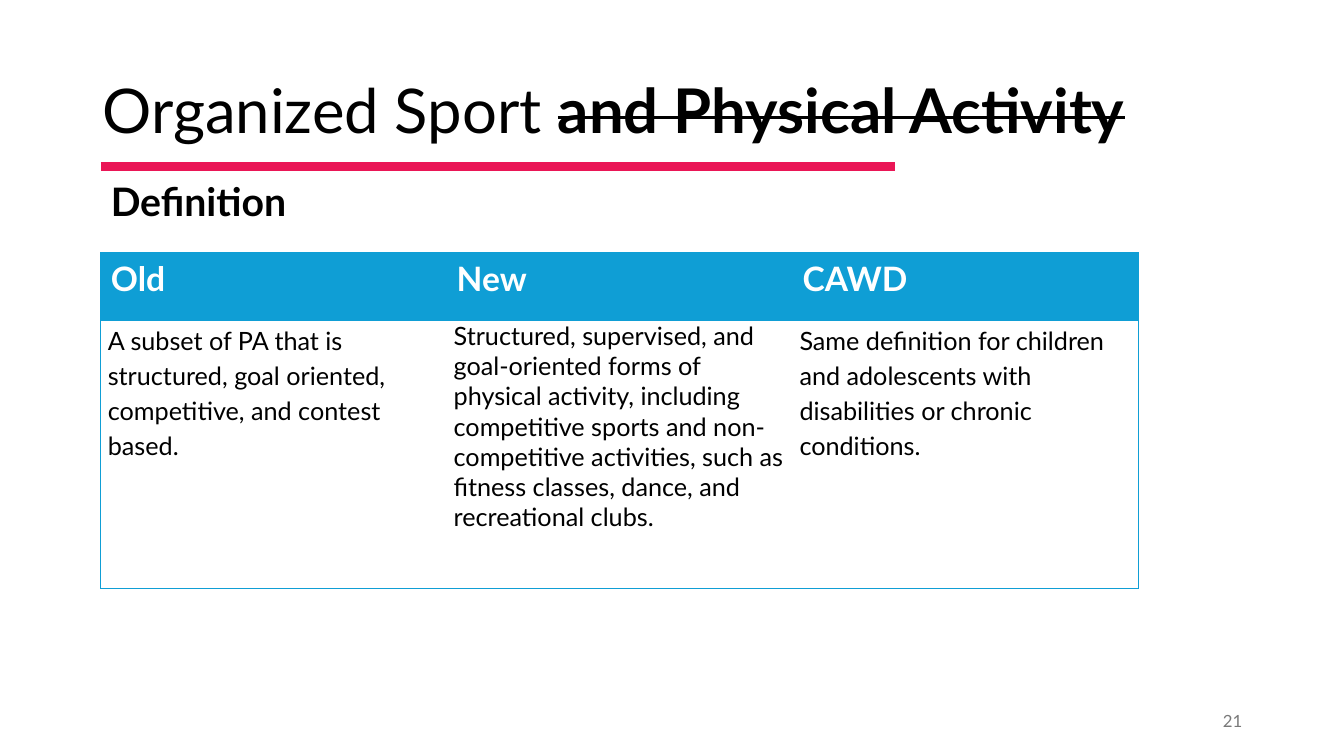
from lxml import etree
from pptx import Presentation
from pptx.dml.color import RGBColor
from pptx.enum import shapes, text
from pptx.oxml import ns
from pptx.util import Inches, Pt

FONT = "Lato"
BLACK, WHITE, GRAY = "000000", "FFFFFF", "797979"
BLUE, PINK = "0F9ED5", "EA1656"
HEADINGS = ["Old", "New", "CAWD"]
DEFINITIONS = [
    ("A subset of PA that is structured, goal oriented, competitive, and contest based.", 1.16),
    ("Structured, supervised, and goal-oriented forms of physical activity, including "
     "competitive sports and non-competitive activities, such as fitness classes, dance, "
     "and recreational clubs.", None),
    ("Same definition for children and adolescents with disabilities or chronic conditions.", 1.16),
]


def color(value):
    return RGBColor.from_string(value)


def add_run(paragraph, words, size, fill=BLACK, bold=False, strike=False):
    run = paragraph.add_run()
    run.text = words
    run.font.name = FONT
    run.font.size = Pt(size)
    run.font.bold = bold
    run.font.color.rgb = color(fill)
    if strike:
        run.font._element.set("strike", "sngStrike")


def add_text_box(slide, left, top, width, height, anchor=text.MSO_ANCHOR.MIDDLE):
    frame = slide.shapes.add_textbox(
        Inches(left), Inches(top), Inches(width), Inches(height)).text_frame
    frame.word_wrap = True
    frame.vertical_anchor = anchor
    return frame.paragraphs[0]


def add_rule(slide, left, right, y):
    rule = slide.shapes.add_connector(
        shapes.MSO_CONNECTOR.STRAIGHT, Inches(left), Inches(y), Inches(right), Inches(y))
    rule.line.color.rgb = color(PINK)
    rule.line.width = Pt(6)
    etree.SubElement(rule._element.spPr, ns.qn("a:effectLst"))


def set_borders(cell, visible_sides):
    properties = cell._tc.get_or_add_tcPr()
    for side in "LRTB":
        border = etree.SubElement(properties, ns.qn(f"a:ln{side}"), w=str(Pt(1)))
        if side in visible_sides:
            fill = etree.SubElement(border, ns.qn("a:solidFill"))
            etree.SubElement(fill, ns.qn("a:srgbClr"), val=BLUE)
        else:
            etree.SubElement(border, ns.qn("a:noFill"))


def style_cell(cell, fill, visible_sides):
    set_borders(cell, visible_sides)
    cell.fill.solid()
    cell.fill.fore_color.rgb = color(fill)
    return cell.text_frame.paragraphs[0]


def add_definition_table(slide):
    table = slide.shapes.add_table(
        2, len(HEADINGS), Inches(1), Inches(2.51), Inches(10.29), Inches(3.33)).table
    table.horz_banding = False
    table.rows[0].height = Inches(0.67)
    table.rows[1].height = Inches(2.66)
    outer_sides = ["L", "", "R"]
    for index, (heading, (definition, spacing)) in enumerate(zip(HEADINGS, DEFINITIONS)):
        table.columns[index].width = Inches(3.43)
        sides = outer_sides[index] + "TB"
        paragraph = style_cell(table.cell(0, index), BLUE, sides)
        add_run(paragraph, heading, 24, WHITE, bold=True)

        body = table.cell(1, index)
        body.margin_left = body.margin_right = Inches(0.07)
        body.margin_top = body.margin_bottom = 0
        paragraph = style_cell(body, WHITE, sides)
        if spacing:
            paragraph.line_spacing = spacing
            paragraph.space_after = Pt(8)
        add_run(paragraph, definition, 18)


def main():
    presentation = Presentation()
    presentation.slide_width = Inches(13.33)
    presentation.slide_height = Inches(7.5)
    slide = presentation.slides.add_slide(presentation.slide_layouts[6])

    title = add_text_box(slide, 0.92, 0.4, 11.5, 1.45)
    title.line_spacing = 0.9
    add_run(title, "Organized Sport ", 44)
    add_run(title, "and Physical Activity", 44, bold=True, strike=True)

    number = add_text_box(slide, 9.42, 6.95, 3, 0.4)
    number.alignment = text.PP_ALIGN.RIGHT
    add_run(number, "21", 12, GRAY)

    add_rule(slide, 1, 8.88, 1.65)
    subtitle = add_text_box(slide, 1, 1.71, 2.81, 0.57, text.MSO_ANCHOR.TOP)
    add_run(subtitle, "Definition", 28, bold=True)
    add_definition_table(slide)
    presentation.save("out.pptx")


if __name__ == "__main__":
    main()
